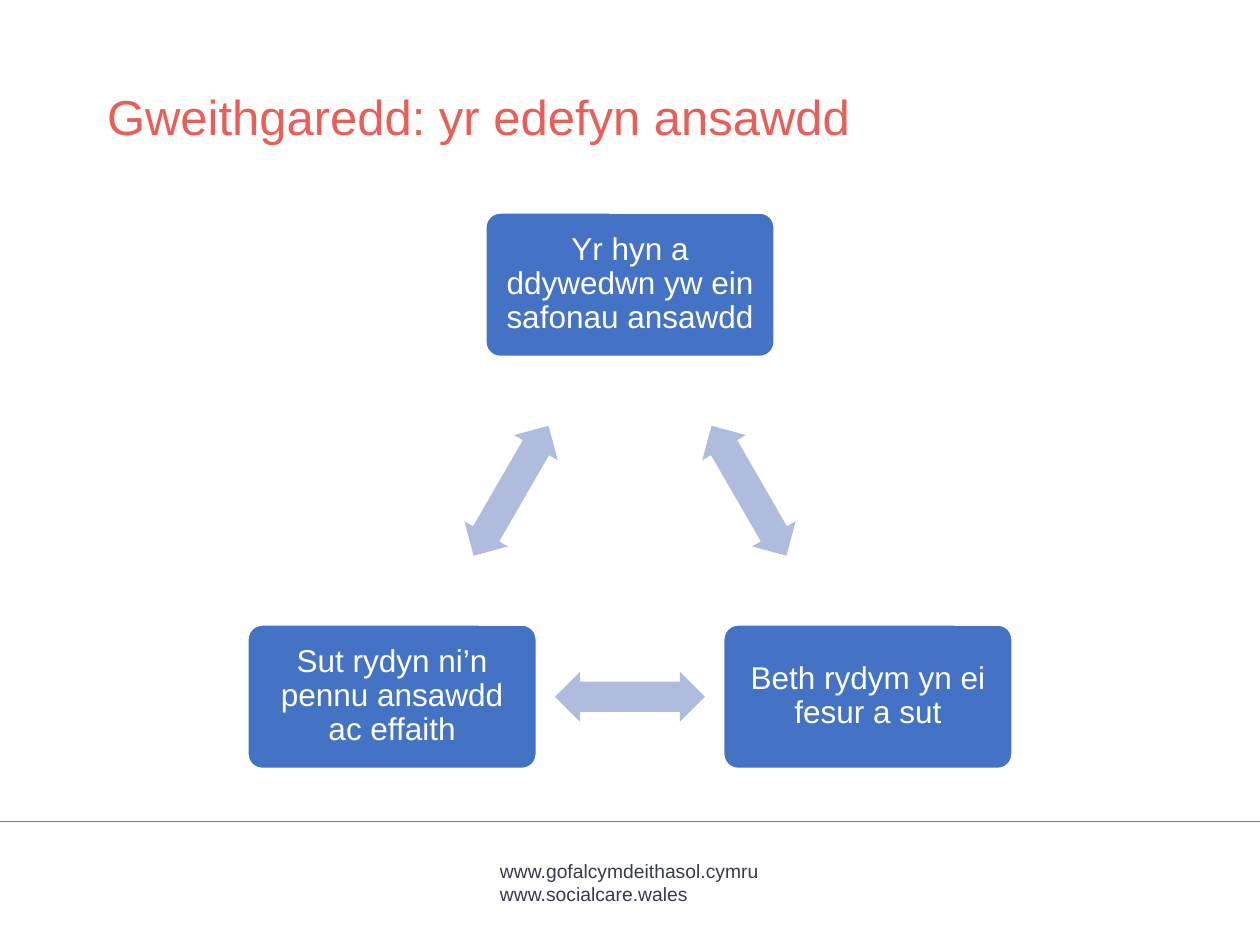
from math import cos, radians, sin
from pptx import Presentation
from pptx.dml.color import RGBColor
from pptx.enum.shapes import MSO_CONNECTOR, MSO_SHAPE
from pptx.enum.text import MSO_ANCHOR, MSO_AUTO_SIZE, PP_ALIGN
from pptx.oxml.ns import qn
from pptx.util import Inches, Pt
from lxml import etree

CORAL = RGBColor(0xEB, 0x5E, 0x57)
BLUE = RGBColor(0x44, 0x72, 0xC4)
PALE_BLUE = RGBColor(0xB0, 0xBC, 0xDE)
GREEN = RGBColor(0x16, 0xAD, 0x85)
SLATE = RGBColor(0x37, 0x39, 0x4C)
WHITE = RGBColor(0xFF, 0xFF, 0xFF)

deck = Presentation()
deck.slide_width, deck.slide_height = Inches(10), Inches(7.5)
column, row = deck.slide_width / 100, deck.slide_height / 75
page = deck.slides.add_slide(deck.slide_layouts[5])


def format_text(paragraph, size, color, align, spacing):
    paragraph.alignment = align
    paragraph.line_spacing = spacing
    for span in paragraph.runs:
        span.font.name = "Arial"
        span.font.size = Pt(size)
        span.font.color.rgb = color


def add_centred(kind, angle, radius, width, height, fill):
    x = 50 + radius * cos(radians(angle))
    y = 44.4 + radius * sin(radians(angle))
    shape = page.shapes.add_shape(
        kind, int((x - width / 2) * column), int((y - height / 2) * row),
        int(width * column), int(height * row))
    shape.shadow.inherit = False
    shape.fill.solid()
    shape.fill.fore_color.rgb = fill
    return shape


title = page.shapes.title
title.left, title.top = int(7.5 * column), int(6.9 * row)
title.width, title.height = int(85.1 * column), int(10 * row)
title.text_frame.text = "Gweithgaredd: yr edefyn ansawdd"
title.text_frame.vertical_anchor = MSO_ANCHOR.TOP
title.text_frame.auto_size = MSO_AUTO_SIZE.NONE
format_text(title.text_frame.paragraphs[0], 28, CORAL, PP_ALIGN.LEFT, 0.9)

rule_y = int(65.2 * row)
rule = page.shapes.add_connector(MSO_CONNECTOR.STRAIGHT, 0, rule_y, deck.slide_width, rule_y)
rule.line.color.rgb = GREEN
rule.line.width = Pt(1)
etree.SubElement(rule._element.spPr, qn("a:effectLst"))

footer = page.shapes.add_textbox(
    int(38.7 * column), int(67.7 * row), int(22.6 * column), int(4.6 * row))
footer.text_frame.word_wrap = True
footer.text_frame.margin_right = 0
footer.text_frame.text = "www.gofalcymdeithasol.cymru\nwww.socialcare.wales"
for para in footer.text_frame.paragraphs:
    format_text(para, 11, SLATE, PP_ALIGN.LEFT, 1.0)

triangle_radius = 21.8
steps = [
    "Yr hyn a ddywedwn yw ein safonau ansawdd",
    "Beth rydym yn ei fesur a sut",
    "Sut rydyn ni’n pennu ansawdd ac effaith",
]
for index, wording in enumerate(steps):
    turn = 120 * index
    box = add_centred(MSO_SHAPE.ROUNDED_RECTANGLE, turn - 90, triangle_radius, 22.9, 11.4, BLUE)
    box.adjustments[0] = 0.1
    box.line.color.rgb = WHITE
    box.line.width = Pt(1)
    frame = box.text_frame
    frame.word_wrap = True
    frame.vertical_anchor = MSO_ANCHOR.MIDDLE
    frame.margin_left = frame.margin_right = Inches(0.07)
    frame.margin_top = frame.margin_bottom = Inches(0.07)
    frame.text = wording
    format_text(frame.paragraphs[0], 18, WHITE, PP_ALIGN.CENTER, 0.9)

    arrow = add_centred(
        MSO_SHAPE.LEFT_RIGHT_ARROW, turn - 30, triangle_radius / 2, 11.9, 4, PALE_BLUE)
    arrow.adjustments[0] = 0.6
    arrow.adjustments[1] = 0.5
    arrow.rotation = turn + 60
    arrow.line.fill.background()

deck.save("out.pptx")
